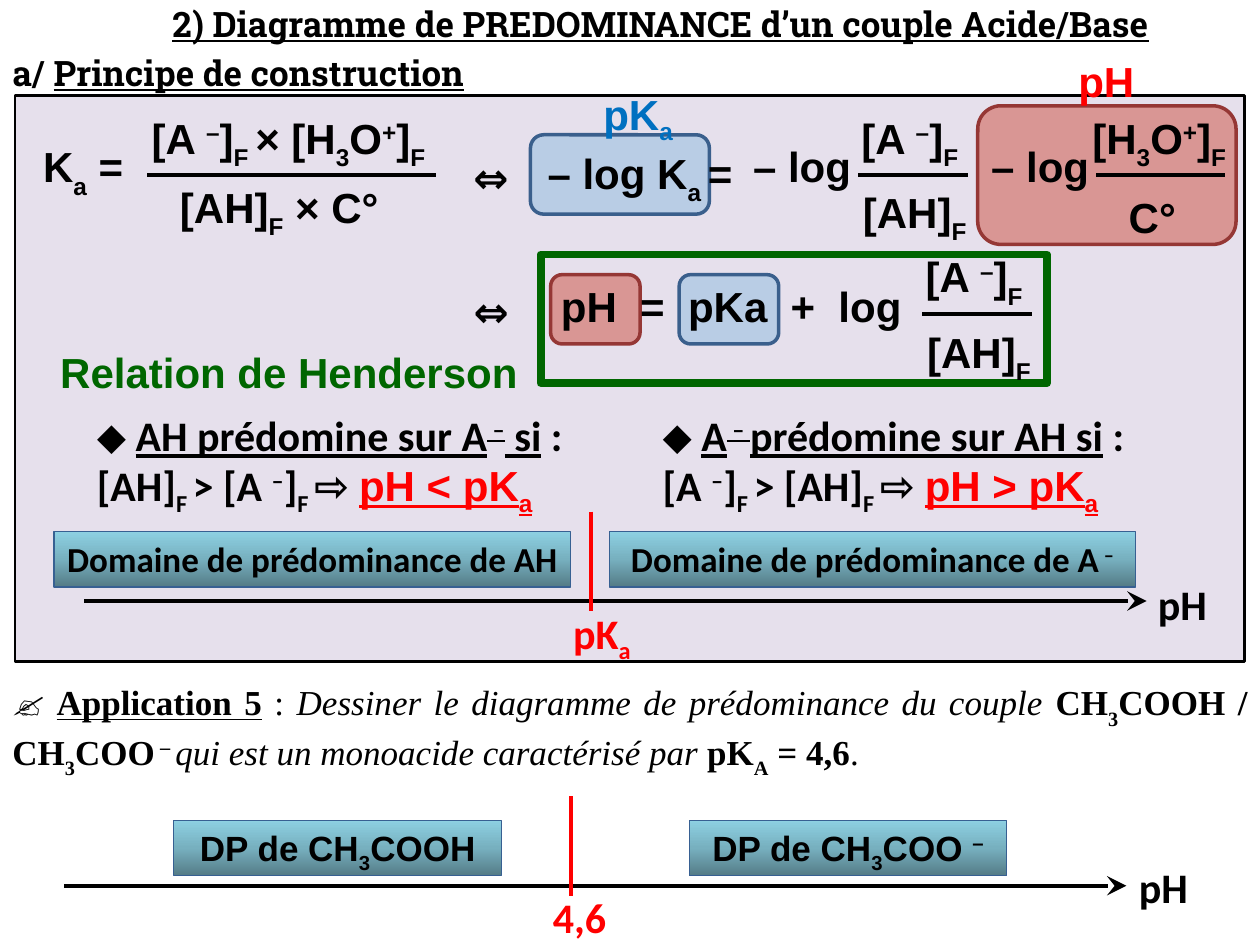
from copy import deepcopy

from lxml import etree
from pptx import Presentation
from pptx.dml.color import RGBColor
from pptx.enum.shapes import MSO_CONNECTOR, MSO_SHAPE
from pptx.enum.text import MSO_ANCHOR, MSO_AUTO_SIZE, PP_ALIGN
from pptx.oxml.ns import qn
from pptx.util import Inches, Pt

RECTANGLE, ROUNDED = MSO_SHAPE.RECTANGLE, MSO_SHAPE.ROUNDED_RECTANGLE
STRAIGHT = MSO_CONNECTOR.STRAIGHT
LEFT, CENTER, JUSTIFY = PP_ALIGN.LEFT, PP_ALIGN.CENTER, PP_ALIGN.JUSTIFY
TOP, MIDDLE = MSO_ANCHOR.TOP, MSO_ANCHOR.MIDDLE
FIT_SHAPE = MSO_AUTO_SIZE.SHAPE_TO_FIT_TEXT
color = RGBColor.from_string
BLACK, RED, GREEN, BLUE = "000000", "FF0000", "006600", "0070C0"

presentation = Presentation()
presentation.slide_width, presentation.slide_height = Inches(10), Inches(7.5)
slide = presentation.slides.add_slide(presentation.slide_layouts[6])


def write(shape, *paragraphs, size=24, font="Arial", ink=BLACK, bold=True,
          align=LEFT, wrap=False, anchor=TOP, shift=30):
    """Each paragraph is a string or a list of (text, format) pairs.
    In a text, | parts the pieces; _ starts a subscript and ^ a superscript."""
    frame = shape.text_frame
    frame.word_wrap, frame.auto_size, frame.vertical_anchor = wrap, FIT_SHAPE, anchor
    for number, content in enumerate(paragraphs):
        paragraph = frame.add_paragraph() if number else frame.paragraphs[0]
        paragraph.alignment = align
        for text, style in [(content, {})] if isinstance(content, str) else content:
            for piece in text.split("|"):
                run = paragraph.add_run()
                run.text = piece.lstrip("_^")
                run.font.name = style.get("font", font)
                run.font.size = Pt(style.get("size", size))
                run.font.bold = style.get("bold", bold)
                run.font.italic = style.get("italic", False)
                run.font.underline = style.get("underline", False)
                run.font.color.rgb = color(style.get("ink", ink))
                if piece[0] in "_^":
                    baseline = -shift if piece[0] == "_" else 30
                    run.font._element.set("baseline", str(baseline * 1000))


def draw_line(x1, y1, x2, y2, ink=BLACK, arrow=False):
    line = slide.shapes.add_connector(STRAIGHT, Inches(x1), Inches(y1), Inches(x2), Inches(y2))
    line.line.color.rgb = color(ink)
    line.line.width = Pt(2.25)
    if arrow:
        etree.SubElement(line.line._get_or_add_ln(), qn("a:tailEnd"),
                         type="stealth", w="lg", len="lg")
    etree.SubElement(line._element.spPr, qn("a:effectLst"))


# Panel, highlights behind the formulas, frame of the Henderson relation
for kind, left, top, width, height, fill, outline, weight in [
    (RECTANGLE, 0.12, 0.76, 9.76, 4.49, "E6E0EC", BLACK, 1.5),
    (ROUNDED, 5.39, 2.18, 0.79, 0.55, "B9CDE5", "3A5F8C", 2),
    (ROUNDED, 4.37, 2.18, 0.71, 0.55, "D99694", "953735", 2),
    (ROUNDED, 4.21, 1.07, 1.42, 0.63, "B9CDE5", "3A5F8C", 2),
    (ROUNDED, 7.76, 0.84, 2.05, 1.1, "D99694", "953735", 2),
    (RECTANGLE, 4.29, 2.02, 4.02, 1.02, None, GREEN, 4.5),
]:
    shape = slide.shapes.add_shape(kind, Inches(left), Inches(top), Inches(width), Inches(height))
    shape.shadow.inherit = False
    if fill:
        shape.fill.solid()
        shape.fill.fore_color.rgb = color(fill)
    else:
        shape.fill.background()
    shape.line.color.rgb = color(outline)
    shape.line.width = Pt(weight)

# Fraction bars
for left, right, y in [(1.17, 3.46, 1.39), (6.81, 7.68, 1.39), (8.7, 9.72, 1.39), (7.32, 8.19, 2.49)]:
    draw_line(left, y, right, y)

# Headings, formulas and predominance rules
underlined = {"underline": True}
heading = {"size": 20, "font": "Roboto Slab", "align": JUSTIFY}
centered = {"align": CENTER}
calibri = {"font": "Calibri"}
rule = {"font": "Calibri", "wrap": True, "shift": 25}
bullet = ("⬥ ", {"bold": False})
gap = (" ", {"size": 20, "font": "Arial", "ink": "002060"})
result = {"font": "Arial", "ink": RED, "underline": True}
base_over_f, acid_over_f = "[A |^–|]|_F", "[AH]|_F"

for left, top, width, height, paragraphs, style in [
    (1.27, -0.03, 8.75, 0.44,
     [[("2) Diagramme de PREDOMINANCE d’un couple Acide/Base", underlined)]], heading),
    (0, 0.36, 4.25, 0.44, [[("a/ ", {}), ("Principe de construction", underlined)]], heading),
    (0.23, 1.07, 0.86, 0.5, ["K|_a| ="], centered),
    (1.06, 0.84, 2.46, 0.5, ["[A |^–|]|_F |× [H|_3|O|^+|]|_F"], centered),
    (1.33, 1.39, 1.78, 0.5, ["[AH]|_F| × C°"], {}),
    (3.66, 1.15, 0.87, 0.5, ["⇔"], {"font": "Calibri", "wrap": True}),
    (4.21, 1.12, 1.74, 0.5, ["– log K|_a |="], centered),
    (5.87, 1.07, 0.99, 0.5, ["– log"], centered),
    (7.76, 1.07, 0.99, 0.5, ["– log"], centered),
    (8.54, 0.84, 1.32, 0.5, ["[H|_3|O|^+|]|_F"], centered),
    (8.86, 1.47, 0.58, 0.5, ["C°"], {}),
    (6.73, 0.84, 0.98, 0.5, [base_over_f], centered),
    (6.75, 1.43, 1.05, 0.5, [acid_over_f], {}),
    (3.66, 2.22, 0.71, 0.5, ["⇔"], {"font": "Calibri", "wrap": True}),
    (4.34, 2.18, 3.02, 0.5, ["pH  =  pKa  +  log "], centered),
    (7.24, 1.94, 0.98, 0.5, [base_over_f], centered),
    (7.26, 2.54, 1.05, 0.5, [acid_over_f], {}),
    (0.67, 3.2, 3.94, 0.91,
     [[bullet, ("AH prédomine sur A|^ –| si", underlined), (" :", {})],
      [("[AH]|_F |> [A |^–|]|_F |⇨", {}), gap, ("pH < pK|_a", result)]], rule),
    (5.16, 3.2, 4.09, 0.91,
     [[bullet, ("A|^ – |prédomine sur AH si", underlined), (" :", {})],
      [("[A |^–|]|_F |> [AH]|_F |⇨", {}), gap, ("pH > pK|_a", result)]], rule),
    (0, 5.41, 10, 0.77,
     [[("✍ ", {}), ("Application 5", underlined), (" : ", {"bold": False}),
       ("Dessiner le diagramme de prédominance du couple ", {"bold": False, "italic": True}),
       ("CH|_3|COOH / CH|_3|COO|^ – ", {}),
       ("qui est un monoacide caractérisé par ", {"bold": False, "italic": True}),
       ("pK|_A| = 4,6", {}), (".", {"bold": False})]],
     {"size": 20, "font": "Times New Roman", "align": JUSTIFY, "wrap": True, "anchor": MIDDLE}),
    (8.46, 0.39, 0.65, 0.5, ["pH"], {"ink": RED}),
    (4.69, 0.65, 0.78, 0.5, ["pK|_a"], {"ink": BLUE, "shift": 25}),
    (0.38, 2.7, 3.87, 0.5, ["Relation de Henderson"], {"ink": GREEN}),
    (9.09, 4.54, 0.59, 0.5, ["pH"], calibri),
    (4.45, 4.77, 0.67, 0.5, ["pK|_a"], {"font": "Calibri", "ink": RED, "shift": 25}),
    (8.94, 6.79, 0.59, 0.5, ["pH"], calibri),
    (4.29, 7.03, 0.63, 0.5, ["4,6"], {"font": "Calibri", "ink": RED}),
]:
    box = slide.shapes.add_textbox(Inches(left), Inches(top), Inches(width), Inches(height))
    write(box, *paragraphs, **style)

# pH axes with their pKa marks
for left, right, y, mark in [(0.67, 9.1, 4.77, 4.69), (0.51, 8.94, 7.03, 4.53)]:
    draw_line(left, y, right, y, arrow=True)
    draw_line(mark, y - 0.71, mark, y + 0.08, ink=RED)

# Predominance domains above the axes
for left, top, width, text, font in [
    (0.43, 4.22, 4.1, "Domaine de prédominance de AH", "Calibri"),
    (4.84, 4.22, 4.17, "Domaine de prédominance de A|^ –", "Calibri"),
    (1.38, 6.51, 2.6, "DP de CH|_3|COOH", "Arial"),
    (5.47, 6.51, 2.52, "DP de CH|_3|COO |^–", "Arial"),
]:
    domain = slide.shapes.add_shape(RECTANGLE, Inches(left), Inches(top), Inches(width), Inches(0.44))
    domain.shadow.inherit = False
    domain.fill.gradient()
    domain.fill.gradient_angle = 90
    first_stop = domain._element.spPr.find(".//" + qn("a:gs"))
    first_stop.addnext(deepcopy(first_stop))
    stops = [(0, "547B86"), (0.5, "77B0BF"), (1, "8DD0E2")]
    for stop, (position, shade) in zip(domain.fill.gradient_stops, stops):
        stop.position = position
        stop.color.rgb = color(shade)
    domain.line.color.rgb = color("376092")
    domain.line.width = Pt(0.75)
    write(domain, text, size=20, font=font, align=CENTER, wrap=True, shift=25)

presentation.save("out.pptx")
